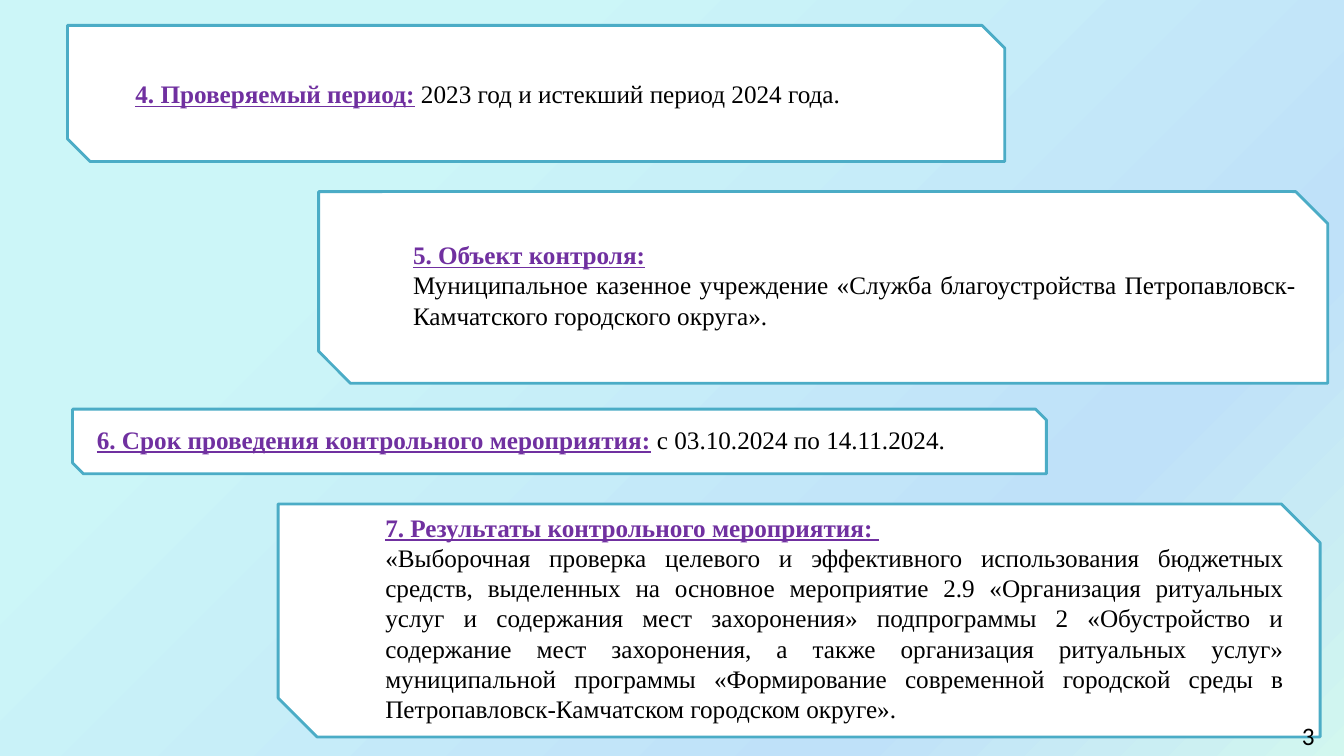
from dataclasses import dataclass
from typing import NamedTuple

from lxml.etree import SubElement
from pptx import Presentation
from pptx.dml.color import RGBColor
from pptx.enum.shapes import MSO_SHAPE as Shape
from pptx.enum.text import MSO_ANCHOR as Anchor, PP_ALIGN as Align
from pptx.oxml.ns import qn
from pptx.util import Cm, Pt


@dataclass(frozen=True)
class Theme:
    """Colours, fonts and sizes of the slide."""
    backdrop: tuple = ((25, "CCF6F8"), (75, "BFE1F9"), (100, "D2F7EF"))
    panel: str = "FFFFFF"
    border: str = "4BACC6"
    heading: str = "7030A0"
    body: str = "000000"
    text_font: str = "Times New Roman"
    number_font: str = "Calibri"
    size: int = 18
    border_width: int = 2


class Box(NamedTuple):
    """A rectangle in centimetres."""
    left: float
    top: float
    width: float
    height: float

    def inset(self, left, top, right, bottom):
        """Return the box reduced by the four margins."""
        return Box(self.left + left, self.top + top,
                   self.width - left - right, self.height - top - bottom)

    def lengths(self):
        """Return the four values as lengths."""
        return [Cm(value) for value in self]


THEME = Theme()
PAGE = Box(0, 0, 33.87, 19.05)

SECTIONS = [
    (Box(8.03, 4.83, 25.43, 4.83), (1.62, 0.07, 0.16, 0.21), Align.JUSTIFY,
     [["5. Объект контроля:"],
      ["", "Муниципальное казенное учреждение «Служба благоустройства "
           "Петропавловск-Камчатского городского округа»."]]),
    (Box(1.83, 10.31, 24.54, 1.63), (0.13, 0.15, 1.5, 0.26), Align.JUSTIFY,
     [["6. Срок проведения контрольного мероприятия:",
       " с 03.10.2024 по 14.11.2024."]]),
    (Box(7.01, 12.7, 26.26, 5.87), (1.88, 0.23, 0.22, 0.36), Align.JUSTIFY,
     [["7. Результаты контрольного мероприятия: "],
      ["", "«Выборочная проверка целевого и эффективного использования "
           "бюджетных средств, выделенных на основное мероприятие 2.9 "
           "«Организация ритуальных услуг и содержания мест захоронения» "
           "подпрограммы 2 «Обустройство и содержание мест захоронения, "
           "а также организация ритуальных услуг» муниципальной программы "
           "«Формирование современной городской среды в "
           "Петропавловск-Камчатском городском округе»."]]),
    (Box(1.7, 0.64, 23.62, 3.43), (0.13, 0.12, 2.56, 0.11), Align.CENTER,
     [["4. Проверяемый период:", " 2023 год и истекший период 2024 года."]]),
]


def add_text(paragraph, text, font=THEME.text_font, color=THEME.body,
             bold=False, underline=False):
    """Append a formatted run to the paragraph."""
    run = paragraph.add_run()
    run.text = text
    run.font.name = font
    run.font.size = Pt(THEME.size)
    run.font.bold = bold
    run.font.underline = underline
    run.font.color.rgb = RGBColor.from_string(color)


def add_backdrop(slide, box):
    """Cover the box with the diagonal gradient."""
    backdrop = slide.shapes.add_shape(Shape.RECTANGLE, *box.lengths())
    backdrop.shadow.inherit = False
    backdrop.line.fill.background()
    backdrop.fill.gradient()
    backdrop.fill.gradient_angle = 315
    stops = next(backdrop.element.iter(qn("a:gsLst")))
    for old_stop in list(stops):
        stops.remove(old_stop)
    for position, color in THEME.backdrop:
        stop = SubElement(stops, qn("a:gs"), pos=str(position * 1000))
        SubElement(stop, qn("a:srgbClr"), val=color)


def add_panel(slide, box, border):
    """Draw a white panel with two snipped corners."""
    panel = slide.shapes.add_shape(Shape.SNIP_2_DIAG_RECTANGLE, *box.lengths())
    panel.shadow.inherit = False
    panel.fill.solid()
    panel.fill.fore_color.rgb = RGBColor.from_string(THEME.panel)
    panel.line.color.rgb = RGBColor.from_string(border)
    panel.line.width = Pt(THEME.border_width)
    return panel


def add_section(slide, box, margins, align, paragraphs):
    """Draw a bordered card with its text panel inside the box."""
    add_panel(slide, box, THEME.border)
    frame = add_panel(slide, box.inset(*margins), THEME.panel).text_frame
    frame.word_wrap = True
    frame.vertical_anchor = Anchor.MIDDLE
    for index, (heading, *body) in enumerate(paragraphs):
        paragraph = frame.add_paragraph() if index else frame.paragraphs[0]
        paragraph.alignment = align
        if align == Align.JUSTIFY:
            properties = paragraph._p.get_or_add_pPr()
            properties.set("marL", str(Cm(0.13)))
            properties.set("indent", "0")
        if heading:
            add_text(paragraph, heading, color=THEME.heading,
                     bold=True, underline=True)
        for text in body:
            add_text(paragraph, text)


def add_page_number(slide, box, number):
    """Write the page number in the box."""
    frame = slide.shapes.add_textbox(*box.lengths()).text_frame
    frame.word_wrap = False
    add_text(frame.paragraphs[0], number, font=THEME.number_font)


def main():
    """Build and save the slide."""
    deck = Presentation()
    deck.slide_width, deck.slide_height = Cm(PAGE.width), Cm(PAGE.height)
    slide = deck.slides.add_slide(deck.slide_layouts[6])
    add_backdrop(slide, PAGE._replace(height=19.48))
    for section in SECTIONS:
        add_section(slide, *section)
    add_page_number(slide, Box(32.56, 18.03, 0.84, 1.02), "3")
    deck.save("out.pptx")


if __name__ == "__main__":
    main()
